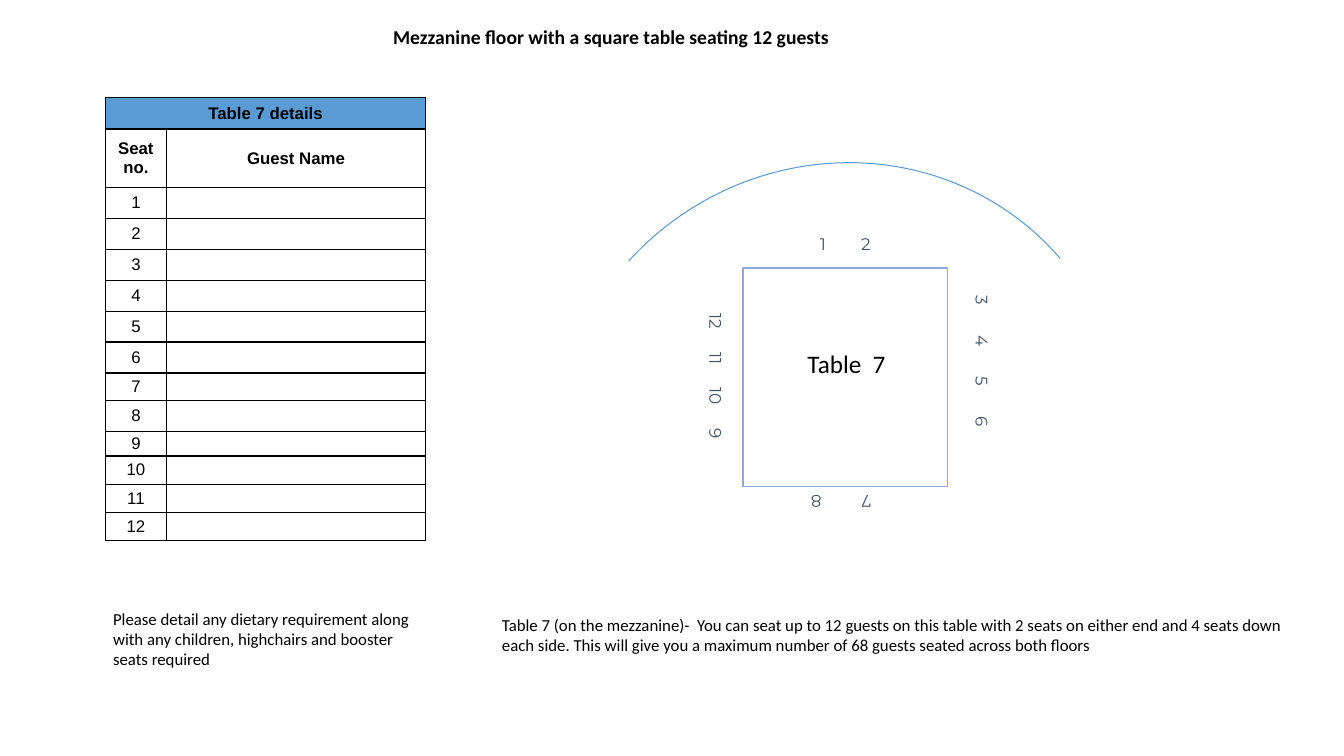
from lxml import etree
from pptx import Presentation
from pptx.dml.color import RGBColor
from pptx.enum.shapes import MSO_SHAPE
from pptx.enum.text import MSO_ANCHOR, MSO_AUTO_SIZE, PP_ALIGN
from pptx.oxml.ns import qn
from pptx.util import Cm, Pt

ARC, RECT = MSO_SHAPE.ARC, MSO_SHAPE.RECTANGLE
TOP, MIDDLE = MSO_ANCHOR.TOP, MSO_ANCHOR.MIDDLE
LEFT, CENTER = PP_ALIGN.LEFT, PP_ALIGN.CENTER
NO_FIT = MSO_AUTO_SIZE.NONE

BLACK, WHITE, BLUE, PALE_BLUE, SLATE = "000000", "FFFFFF", "5B9BD5", "8DA9DB", "44546A"
ROW_HEIGHTS = [0.79, 1.47] + [0.78] * 6 + [0.69, 0.78, 0.62] + [0.71] * 3
SEAT_STRIPS = [
    ([7, 8], 18.29, 12.29, 5.94, 0.74, 180, 2.4, 1.26),
    ([12, 11, 10, 9], 15.44, 8.92, 5.21, 1.17, 90, 1.2, 0.94),
    ([3, 4, 5, 6], 21.82, 8.76, 5.87, 1.45, 90, 1.02, 1.02),
    ([1, 2], 18.29, 5.77, 5.94, 0.74, 0, 2.45, 1.08),
]


def color(value):
    return RGBColor.from_string(value)


def add_run(p, text, size, font="Calibri", bold=False, c=BLACK):
    r = p.add_run()
    r.text = text
    r.font.size = Pt(size)
    r.font.name = font
    r.font.bold = bold
    r.font.color.rgb = color(c)


def add_text(s, text, x, y, w, h, size):
    tf = s.shapes.add_textbox(Cm(x), Cm(y), Cm(w), Cm(h)).text_frame
    tf.word_wrap = True
    add_run(tf.paragraphs[0], text, size)


def set_title(s, text, x, y, w, h):
    title = s.shapes.title
    title.left, title.top, title.width, title.height = Cm(x), Cm(y), Cm(w), Cm(h)
    tf = title.text_frame
    tf.auto_size = NO_FIT
    tf.vertical_anchor = TOP
    p = tf.paragraphs[0]
    p.alignment = LEFT
    add_run(p, text, 14, bold=True)


def add_shape(s, kind, x, y, w, h, fill=None, line=None, width=1):
    sp = s.shapes.add_shape(kind, Cm(x), Cm(y), Cm(w), Cm(h))
    sp.shadow.inherit = False
    if fill:
        sp.fill.solid()
        sp.fill.fore_color.rgb = color(fill)
    else:
        sp.fill.background()
    if line:
        sp.line.color.rgb = color(line)
        sp.line.width = Pt(width)
    else:
        sp.line.fill.background()
    return sp


def add_tab_stops(p, positions):
    tabs = etree.SubElement(p._p.get_or_add_pPr(), qn("a:tabLst"))
    for position in positions:
        etree.SubElement(tabs, qn("a:tab"), pos=str(Cm(position)), algn="ctr")


def add_seat_strip(s, seats, x, y, w, h, rotation, first, step):
    sp = add_shape(s, RECT, x, y, w, h, fill=WHITE)
    sp.rotation = rotation
    tf = sp.text_frame
    tf.margin_left = tf.margin_right = tf.margin_top = tf.margin_bottom = 0
    tf.vertical_anchor = MIDDLE
    p = tf.paragraphs[0]
    p.alignment = LEFT
    add_tab_stops(p, [first + i * step for i in range(len(seats))])
    add_run(p, "".join(f"\t{seat}" for seat in seats), 12, "Montserrat", c=SLATE)


def add_borders(cell):
    tc_pr = cell._tc.get_or_add_tcPr()
    for side in ("a:lnL", "a:lnR", "a:lnT", "a:lnB"):
        ln = etree.SubElement(tc_pr, qn(side), w=str(Pt(1)))
        fill = etree.SubElement(ln, qn("a:solidFill"))
        etree.SubElement(fill, qn("a:srgbClr"), val=BLACK)


def format_cell(cell, text="", bold=False, fill=None):
    add_borders(cell)
    if fill:
        cell.fill.solid()
        cell.fill.fore_color.rgb = color(fill)
    else:
        cell.fill.background()
    cell.margin_left = cell.margin_right = cell.margin_top = cell.margin_bottom = 0
    cell.vertical_anchor = MIDDLE
    p = cell.text_frame.paragraphs[0]
    p.alignment = CENTER
    if text:
        add_run(p, text, 12, "Arial", bold)
    else:
        etree.SubElement(p._p, qn("a:endParaRPr"), sz="1200")


def add_guest_table(s, x, y, widths):
    frame = s.shapes.add_table(
        len(ROW_HEIGHTS), 2, Cm(x), Cm(y), Cm(sum(widths)), Cm(sum(ROW_HEIGHTS)))
    table = frame.table
    table.first_row = table.horz_banding = False
    for column, width in zip(table.columns, widths):
        column.width = Cm(width)
    for row, height in zip(table.rows, ROW_HEIGHTS):
        row.height = Cm(height)
    table.cell(0, 0).merge(table.cell(0, 1))
    format_cell(table.cell(0, 0), "Table 7 details", True, BLUE)
    format_cell(table.cell(0, 1), fill=BLUE)
    format_cell(table.cell(1, 0), "Seat no.", True)
    format_cell(table.cell(1, 1), "Guest Name", True)
    for seat in range(1, 13):
        format_cell(table.cell(seat + 1, 0), str(seat))
        format_cell(table.cell(seat + 1, 1))


def add_seating_plan(s):
    add_shape(s, RECT, 18.73, 6.75, 5.15, 5.51, line=PALE_BLUE)
    for strip in SEAT_STRIPS:
        add_seat_strip(s, *strip)
    add_text(s, "Table  7", 20.1, 8.66, 2.6, 1.02, 18)


def main():
    prs = Presentation()
    prs.slide_width, prs.slide_height = Cm(33.87), Cm(19.05)
    s = prs.slides.add_slide(prs.slide_layouts[5])
    set_title(s, "Mezzanine floor with a square table seating 12 guests",
              9.65, 0.5, 12.8, 0.86)
    arc = add_shape(s, ARC, 13.79, 4.21, 14.71, 14.2, line=BLUE, width=0.75)
    arc.adjustments[0] = 157.49
    arc.adjustments[1] = 0
    arc.rotation = 319.3
    add_guest_table(s, 2.66, 2.46, [1.53, 6.54])
    add_seating_plan(s)
    add_text(s, "Please detail any dietary requirement along with any children, "
             "highchairs and booster seats required", 2.6, 15.21, 8.08, 2.39, 12)
    add_text(s, "Table 7 (on the mezzanine)-  You can seat up to 12 guests on this "
             "table with 2 seats on either end and 4 seats down each side. This will "
             "give you a maximum number of 68 guests seated across both floors",
             12.4, 15.37, 20.24, 1.27, 12)
    prs.save("out.pptx")


if __name__ == "__main__":
    main()
